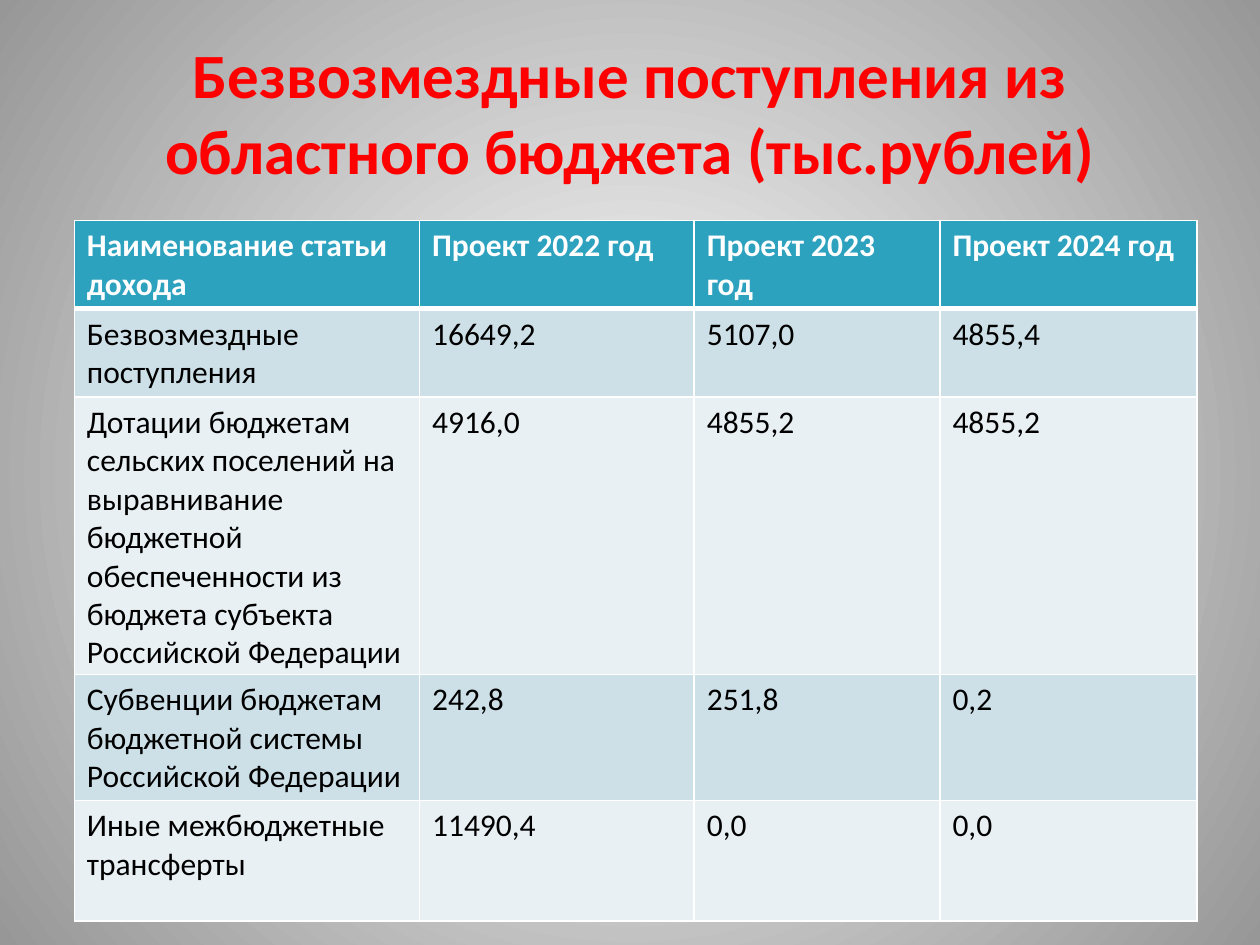
from lxml import etree
from pptx import Presentation
from pptx.dml.color import RGBColor
from pptx.enum.text import MSO_ANCHOR, PP_ALIGN
from pptx.oxml import parse_xml
from pptx.oxml.ns import nsdecls, qn
from pptx.util import Inches, Pt

COLORS = {
    "center": "FFFFFF", "edge": "979797", "title": "FF0000",
    "header": "2DA2BF", "odd": "CDE0E8", "even": "E8F0F4",
    "line": "FFFFFF", "header_text": "FFFFFF", "text": "000000",
}
ROWS = [
    ["Наименование статьи дохода", "Проект 2022 год", "Проект 2023 год", "Проект 2024 год"],
    ["Безвозмездные поступления", "16649,2", "5107,0", "4855,4"],
    ["Дотации бюджетам сельских поселений на выравнивание бюджетной "
     "обеспеченности из бюджета субъекта Российской Федерации", "4916,0", "4855,2", "4855,2"],
    ["Субвенции бюджетам бюджетной системы Российской Федерации", "242,8", "251,8", "0,2"],
    ["Иные межбюджетные трансферты", "11490,4", "0,0", "0,0"],
]
COLUMN_WIDTHS = [2.74, 2.18, 1.95, 2.04]
ROW_HEIGHTS = [0.67, 0.67, 2.11, 0.96, 0.96]


def style_span(span, size, color, bold):
    span.font.name = "Calibri"
    span.font.size = Pt(size)
    span.font.bold = bold
    span.font.color.rgb = RGBColor.from_string(COLORS[color])


def set_borders(cell, widths):
    properties = cell._tc.get_or_add_tcPr()
    for index, (side, width) in enumerate(widths.items()):
        properties.insert(index, parse_xml(
            f'<a:ln{side} {nsdecls("a")} w="{Pt(width)}"><a:solidFill>'
            f'<a:srgbClr val="{COLORS["line"]}"/></a:solidFill></a:ln{side}>'))


deck = Presentation()
deck.slide_width, deck.slide_height = Inches(10), Inches(7.5)
page = deck.slides.add_slide(deck.slide_layouts[6])

# Radial background
fill = page.background.fill
fill.gradient()
for stop, name in zip(fill.gradient_stops, ("center", "edge")):
    stop.color.rgb = RGBColor.from_string(COLORS[name])
gradient = page._element.find(".//" + qn("a:gradFill"))
gradient.remove(gradient.find(qn("a:lin")))
circle = etree.Element(qn("a:path"), path="circle")
etree.SubElement(circle, qn("a:fillToRect"), l="50000", t="50000", r="50000", b="50000")
gradient.find(qn("a:gsLst")).addnext(circle)

# Title with a text shadow
box = page.shapes.add_textbox(Inches(0.5), Inches(0.3), Inches(9), Inches(1.17))
frame = box.text_frame
frame.word_wrap = True
frame.vertical_anchor = MSO_ANCHOR.MIDDLE
frame.text = "Безвозмездные поступления из областного бюджета (тыс.рублей)"
para = frame.paragraphs[0]
para.alignment = PP_ALIGN.CENTER
span = para.runs[0]
style_span(span, 36, "title", True)
span.font._element.find(qn("a:solidFill")).addnext(parse_xml(
    f'<a:effectLst {nsdecls("a")}><a:outerShdw blurRad="38100" dist="38100" dir="2700000">'
    '<a:srgbClr val="000000"><a:alpha val="43000"/></a:srgbClr></a:outerShdw></a:effectLst>'))

# Revenue table
table = page.shapes.add_table(
    len(ROWS), len(COLUMN_WIDTHS), Inches(0.59), Inches(1.75),
    Inches(sum(COLUMN_WIDTHS)), Inches(sum(ROW_HEIGHTS))).table
for column, width in zip(table.columns, COLUMN_WIDTHS):
    column.width = Inches(width)
for row, height in zip(table.rows, ROW_HEIGHTS):
    row.height = Inches(height)

for row_index, values in enumerate(ROWS):
    is_header = row_index == 0
    band = "header" if is_header else ("even", "odd")[row_index % 2]
    for column_index, value in enumerate(values):
        cell = table.cell(row_index, column_index)
        cell.text_frame.text = value
        style_span(cell.text_frame.paragraphs[0].runs[0], 18,
                   "header_text" if is_header else "text", is_header)
        cell.fill.solid()
        cell.fill.fore_color.rgb = RGBColor.from_string(COLORS[band])
        set_borders(cell, {"L": 1, "R": 1, "T": 3 if row_index == 1 else 1,
                           "B": 3 if is_header else 1})

deck.save("out.pptx")
